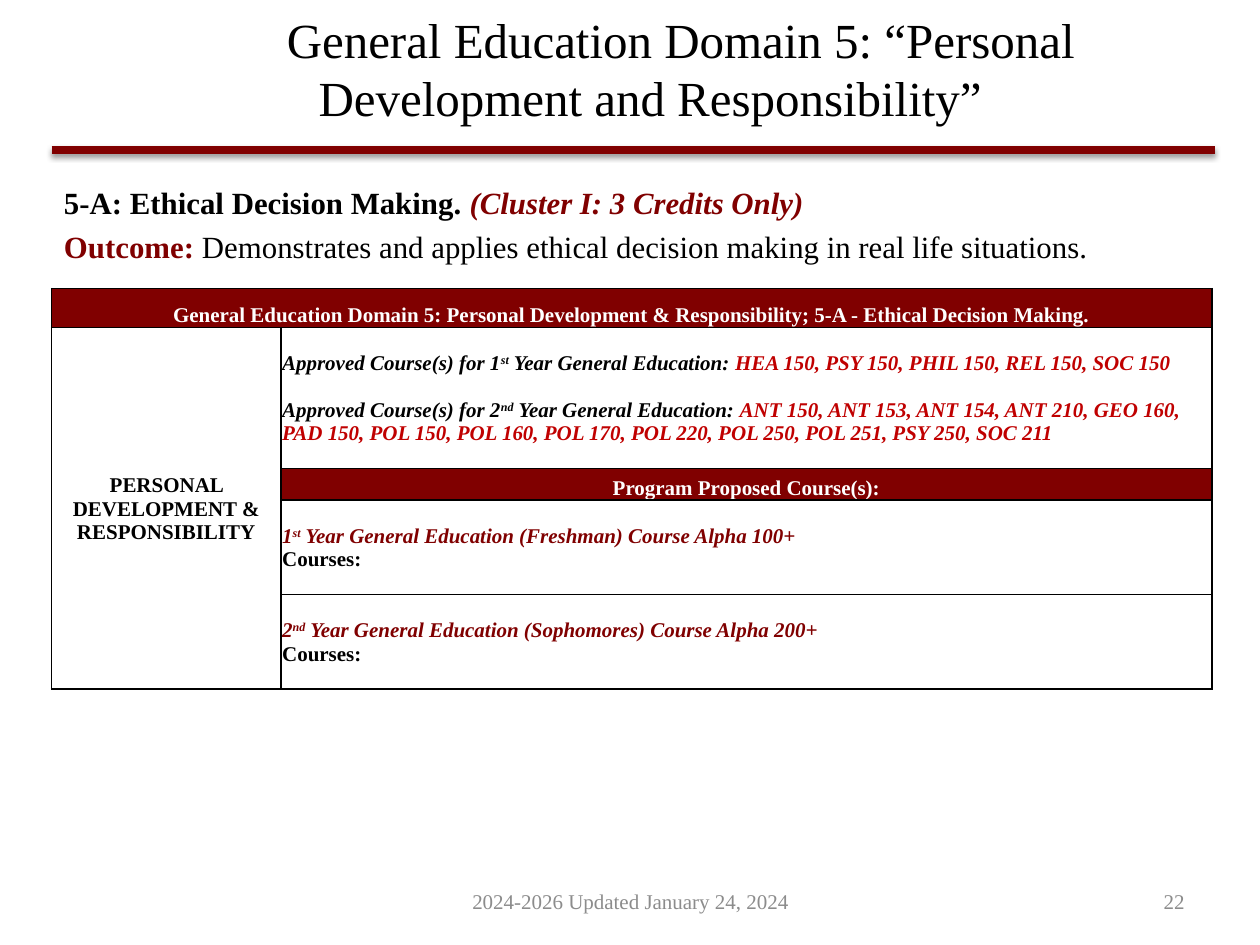
from typing import NamedTuple

from lxml import etree
from pptx import Presentation
from pptx.dml.color import RGBColor
from pptx.enum.shapes import MSO_CONNECTOR
from pptx.enum.text import MSO_ANCHOR, PP_ALIGN
from pptx.oxml import parse_xml
from pptx.oxml.ns import nsdecls, qn
from pptx.util import Inches, Pt

LEFT, CENTER, RIGHT = PP_ALIGN.LEFT, PP_ALIGN.CENTER, PP_ALIGN.RIGHT
TOP, MIDDLE, BOTTOM = MSO_ANCHOR.TOP, MSO_ANCHOR.MIDDLE, MSO_ANCHOR.BOTTOM
STRAIGHT = MSO_CONNECTOR.STRAIGHT

FONT = "Times New Roman"
BLACK, WHITE, GRAY = "000000", "FFFFFF", "8C8C8C"
MAROON, RED = "800000", "C00000"
WIDTH, HEIGHT = Inches(10), Inches(7.5)
COLUMNS, ROWS = 100, 75
EDGE = 4.1


class Run(NamedTuple):
    text: str
    color: str = BLACK
    bold: bool = False
    italic: bool = False
    raised: bool = False


class Para(NamedTuple):
    runs: list[Run]
    align: PP_ALIGN = LEFT
    before: float = 0
    indent: float = 0


class Box(NamedTuple):
    x: float
    y: float
    w: float
    h: float
    size: float
    paras: list[Para]
    anchor: MSO_ANCHOR = MIDDLE


class Cell(NamedTuple):
    row: int
    col: int
    paras: list[Para]
    fill: str = WHITE
    anchor: MSO_ANCHOR = MIDDLE


def cols(n: float) -> int:
    return round(WIDTH * n / COLUMNS)


def rows(n: float) -> int:
    return round(HEIGHT * n / ROWS)


def rgb(color: str) -> RGBColor:
    return RGBColor.from_string(color)


def write(tf, paras: list[Para], size: float) -> None:
    tf.word_wrap = True
    for i, para in enumerate(paras):
        p = tf.add_paragraph() if i else tf.paragraphs[0]
        p.alignment = para.align
        p.space_before = Pt(para.before)
        if para.indent:
            p._p.get_or_add_pPr().set("indent", str(Pt(para.indent)))
        for run in para.runs:
            r = p.add_run()
            r.text = run.text
            r.font.name, r.font.size = FONT, Pt(size)
            r.font.bold, r.font.italic = run.bold, run.italic
            r.font.color.rgb = rgb(run.color)
            if run.raised:
                r._r.get_or_add_rPr().set("baseline", "30000")


def draw_box(s, box: Box) -> None:
    sp = s.shapes.add_textbox(cols(box.x), rows(box.y), cols(box.w), rows(box.h))
    sp.text_frame.vertical_anchor = box.anchor
    write(sp.text_frame, box.paras, box.size)


def draw_rule(s, x1: float, x2: float, y: float) -> None:
    sp = s.shapes.add_connector(STRAIGHT, cols(x1), rows(y), cols(x2), rows(y))
    sp.line.color.rgb = rgb(MAROON)
    sp.line.width = Pt(4.5)
    sp._element.spPr.append(parse_xml(
        f'<a:effectLst {nsdecls("a")}><a:outerShdw blurRad="{Pt(3.1)}" dist="{Pt(1.6)}" '
        f'dir="5400000" rotWithShape="0"><a:srgbClr val="{BLACK}"><a:alpha val="38000"/>'
        '</a:srgbClr></a:outerShdw></a:effectLst>'))


def add_borders(cell) -> None:
    tcPr = cell._tc.get_or_add_tcPr()
    for i, side in enumerate(("lnL", "lnR", "lnT", "lnB")):
        ln = etree.Element(qn(f"a:{side}"), w=str(Pt(1)))
        fill = etree.SubElement(ln, qn("a:solidFill"))
        etree.SubElement(fill, qn("a:srgbClr"), val=BLACK)
        tcPr.insert(i, ln)


def draw_table(s, x: float, y: float, widths: list[float], heights: list[float],
               cells: list[Cell]) -> None:
    table = s.shapes.add_table(len(heights), len(widths), cols(x), rows(y),
                               cols(sum(widths)), rows(sum(heights))).table
    for column, w in zip(table.columns, widths):
        column.width = cols(w)
    for row, h in zip(table.rows, heights):
        row.height = rows(h)
    table.cell(0, 0).merge(table.cell(0, 1))
    table.cell(1, 0).merge(table.cell(4, 0))
    for cell in table.iter_cells():
        cell.fill.solid()
        cell.fill.fore_color.rgb = rgb(WHITE)
        cell.margin_left = cell.margin_right = cell.margin_top = Inches(0.01)
        cell.margin_bottom = 0
        add_borders(cell)
    for c in cells:
        cell = table.cell(c.row, c.col)
        cell.fill.fore_color.rgb = rgb(c.fill)
        cell.vertical_anchor = c.anchor
        write(cell.text_frame, c.paras, 12)


def ordinal(lead: str, suffix: str, rest: str, color: str) -> list[Run]:
    return [Run(lead, color, True, True), Run(suffix, color, True, True, True),
            Run(rest, color, True, True)]


def approved(year: str, suffix: str, courses: str, before: float = 0) -> Para:
    label = ordinal(f"Approved Course(s) for {year}", suffix,
                    " Year General Education: ", BLACK)
    return Para(label + [Run(courses, RED, True, True)], before=before)


def proposed(year: str, suffix: str, level: str) -> list[Para]:
    return [Para(ordinal(year, suffix, f" Year General Education {level}", MAROON)),
            Para([Run("Courses:", bold=True)])]


def heading(text: str, color: str = WHITE) -> list[Para]:
    return [Para([Run(text, color, True)], CENTER)]


BOXES = [
    Box(8.2, 0.6, 86.8, 9.6, 28, [
        Para([Run("General Education Domain 5: “Personal Development and Responsibility”")],
             CENTER, indent=35)]),
    Box(EDGE, 14.1, 92, 8.5, 17.6, [
        Para([Run("5-A: Ethical Decision Making. ", bold=True),
              Run("(Cluster I: 3 Credits Only)", MAROON, True, True)]),
        Para([Run("Outcome: ", MAROON, True),
              Run("Demonstrates and applies ethical decision making in real life situations.")],
             before=4)], TOP),
    Box(34.2, 69.5, 31.7, 4, 12, [
        Para([Run("2024-2026 Updated January 24, 2024", GRAY)], CENTER)]),
    Box(71.7, 69.5, 23.3, 4, 12, [Para([Run("22", GRAY)], RIGHT)]),
]

CELLS = [
    Cell(0, 0, heading("General Education Domain 5: Personal Development & Responsibility; "
                       "5-A - Ethical Decision Making."), MAROON, BOTTOM),
    Cell(1, 0, heading("PERSONAL DEVELOPMENT & RESPONSIBILITY", BLACK)),
    Cell(1, 1, [
        approved("1", "st", "HEA 150, PSY 150, PHIL 150, REL 150, SOC 150"),
        approved("2", "nd", "ANT 150, ANT 153, ANT 154, ANT 210, GEO 160, PAD 150, POL 150, "
                 "POL 160, POL 170, POL 220, POL 250, POL 251, PSY 250, SOC 211", 13.5)]),
    Cell(2, 1, heading("Program Proposed Course(s):"), MAROON, BOTTOM),
    Cell(3, 1, proposed("1", "st", "(Freshman) Course Alpha 100+")),
    Cell(4, 1, proposed("2", "nd", "(Sophomores) Course Alpha 200+")),
]


def main() -> None:
    prs = Presentation()
    prs.slide_width, prs.slide_height = WIDTH, HEIGHT
    s = prs.slides.add_slide(prs.slide_layouts[6])
    draw_rule(s, EDGE, 96.4, 11.9)
    draw_table(s, EDGE, 22.9, [18.2, 73.9], [3.1, 11.2, 2.5, 7.5, 7.5], CELLS)
    for box in BOXES:
        draw_box(s, box)
    prs.save("out.pptx")


if __name__ == "__main__":
    main()
